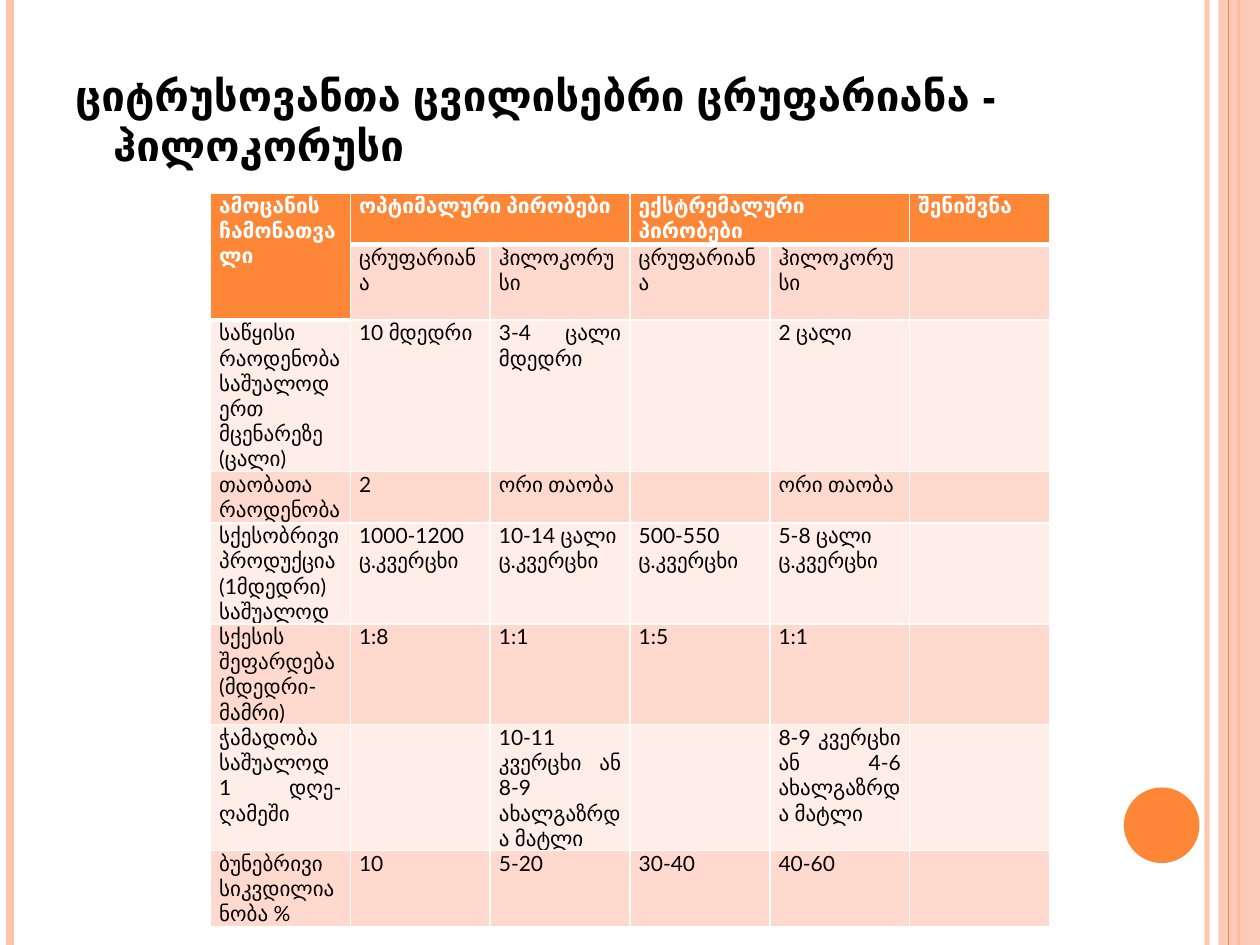
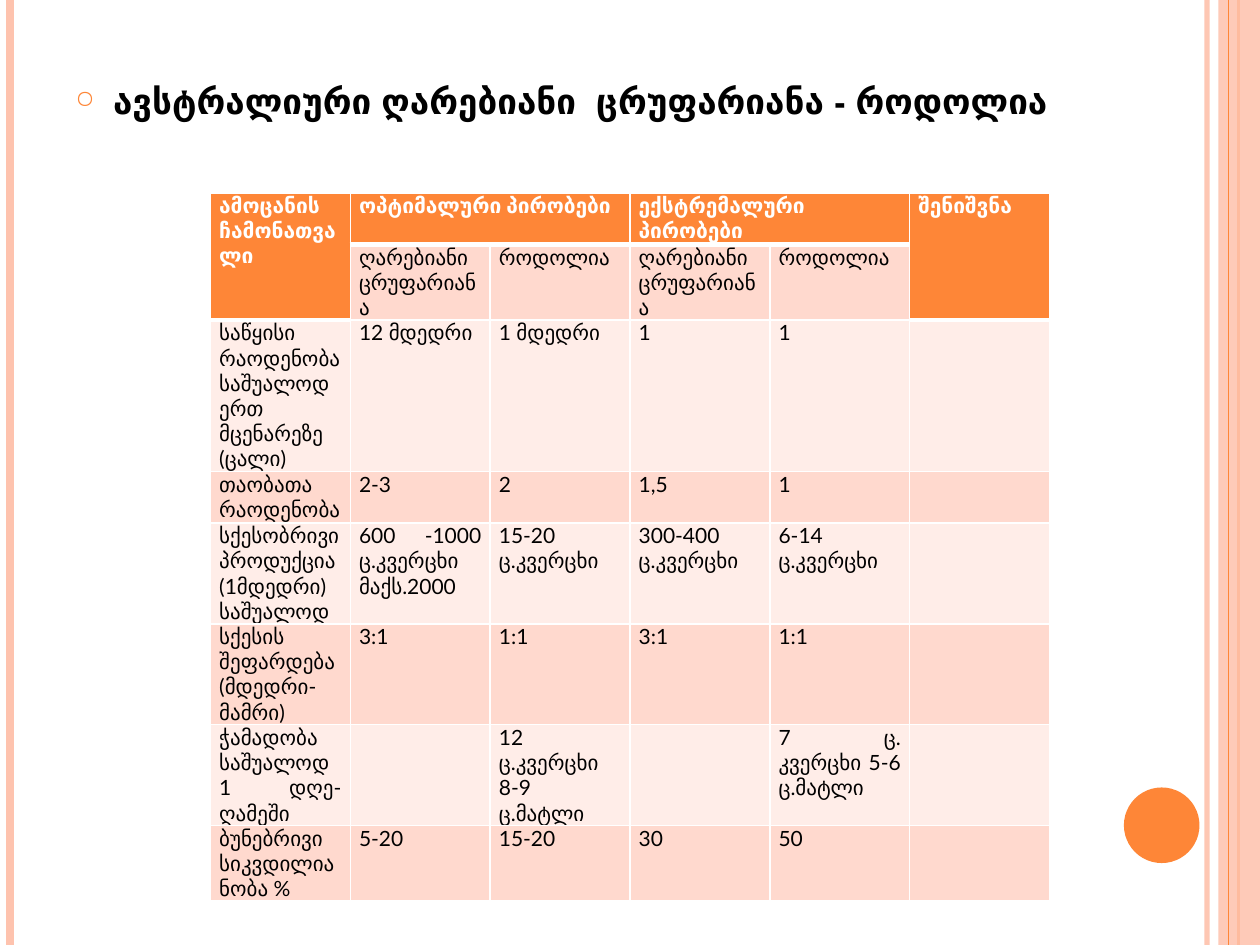
from dataclasses import dataclass

from lxml.etree import SubElement
from pptx import Presentation
from pptx.dml.color import RGBColor
from pptx.enum.shapes import MSO_CONNECTOR, MSO_SHAPE
from pptx.enum.text import PP_ALIGN
from pptx.oxml.ns import qn
from pptx.util import Inches, Pt


@dataclass(frozen=True)
class Theme:
    orange: str = "FE8637"
    peach: str = "FEC3AE"
    white: str = "FFFFFF"
    black: str = "000000"
    bands: tuple = ("FFEDE8", "FFD9CE")
    title_font: str = "TeX Gyre Schola"
    table_font: str = "Lato"
    table_size: int = 12
    rule_width: int = 1
    header_rule_width: int = 3


THEME = Theme()
WIDTH, HEIGHT = 10, 7.5
COLUMN_WIDTH, ROW_HEIGHT = 1.11, 0.41
HEADER_GROUPS = [None, "ოპტიმალური პირობები", None, "ექსტრემალური პირობები", None, "შენიშვნა"]
MEASURES = [
    "თაობათა რაოდენობა",
    "სქესობრივი პროდუქცია (1მდედრი) საშუალოდ",
    "სქესის შეფარდება (მდედრი-მამრი)",
    "ჭამადობა საშუალოდ 1 დღე-ღამეში",
    "ბუნებრივი სიკვდილიანობა %",
]

SCALE_INSECT = {
    "title": "ციტრუსოვანთა ცვილისებრი ცრუფარიანა - ჰილოკორუსი",
    "title_top": 0.5,
    "title_size": 24,
    "bullet": None,
    "corner": "ამოცანის\nჩამონათვალი",
    "header_depths": [2, 1, 1, 1, 1, 1],
    "frame_height": 5.62,
    "species": ["ცრუფარიანა", "ჰილოკორუსი"],
    "initial_count": "საწყისი რაოდენობა საშუალოდ ერთ მცენარეზე (ცალი)",
    "values": [
        ["10 მდედრი", "3-4 ცალი მდედრი", None, "2 ცალი"],
        ["2", "ორი თაობა", None, "ორი თაობა"],
        ["1000-1200 ც.კვერცხი", "10-14 ცალი\nც.კვერცხი", "500-550 ც.კვერცხი", "5-8 ცალი\nც.კვერცხი"],
        ["1:8", "1:1", "1:5", "1:1"],
        [None, "10-11 კვერცხი ან 8-9 ახალგაზრდა მატლი", None, "8-9 კვერცხი ან 4-6 ახალგაზრდა მატლი"],
        ["10", "5-20", "30-40", "40-60"],
    ],
}

FLUTED_SCALE = {
    "title": "ავსტრალიური ღარებიანი  ცრუფარიანა - როდოლია",
    "title_top": 0.58,
    "title_size": 20,
    "bullet": "○",
    "corner": "ამოცანის ჩამონათვალი",
    "header_depths": [2, 1, 1, 1, 1, 2],
    "frame_height": 5.61,
    "species": ["ღარებიანი  ცრუფარიანა", "როდოლია"],
    "initial_count": "საწყისი რაოდენობა\nსაშუალოდ ერთ მცენარეზე (ცალი)",
    "values": [
        ["12 მდედრი", "1 მდედრი", "1", "1"],
        ["2-3", "2", "1,5", "1"],
        ["600 -1000 ც.კვერცხი მაქს.2000", "15-20 ც.კვერცხი", "300-400 ც.კვერცხი", "6-14 ც.კვერცხი"],
        ["3:1", "1:1", "3:1", "1:1"],
        [None, "12 ც.კვერცხი 8-9 ც.მატლი", None, "7 ც. კვერცხი 5-6 ც.მატლი"],
        ["5-20", "15-20", "30", "50"],
    ],
}


def rgb(color):
    return RGBColor.from_string(color)


def set_opacity(element, percent):
    for color in element.iter(qn("a:srgbClr")):
        SubElement(color, qn("a:alpha"), val=str(percent * 1000))


def add_stripe(page, x, color, width, opacity=100):
    stripe = page.shapes.add_connector(
        MSO_CONNECTOR.STRAIGHT, Inches(x), Inches(0), Inches(x), Inches(HEIGHT)
    )
    stripe.line.color.rgb = rgb(color)
    stripe.line.width = Pt(width)
    properties = stripe.element.spPr
    if opacity < 100:
        set_opacity(properties, opacity)
    SubElement(properties, qn("a:effectLst"))


def add_block(page, kind, left, top, width, height, color, opacity=100):
    block = page.shapes.add_shape(kind, Inches(left), Inches(top), Inches(width), Inches(height))
    block.shadow.inherit = False
    block.fill.solid()
    block.fill.fore_color.rgb = rgb(color)
    block.line.fill.background()
    if opacity < 100:
        set_opacity(block.element.spPr, opacity)


def add_frame(page):
    add_stripe(page, 9.58, THEME.peach, 3, 93)
    add_stripe(page, 0.08, THEME.peach, 4.5)
    add_stripe(page, 9.83, THEME.orange, 1.5)
    add_block(page, MSO_SHAPE.RECTANGLE, 9.67, 0, 0.33, HEIGHT, THEME.peach, 87)
    add_stripe(page, 9.75, THEME.orange, 0.75)
    add_block(page, MSO_SHAPE.OVAL, 8.92, 6.25, 0.6, 0.6, THEME.orange)


def set_font(para, name, size, color, bold):
    para.font.name = name
    para.font.size = Pt(size)
    para.font.bold = bold
    para.font.color.rgb = rgb(color)


def add_bullet(properties, character):
    color = SubElement(properties, qn("a:buClr"))
    SubElement(color, qn("a:srgbClr"), val=THEME.orange)
    SubElement(properties, qn("a:buSzPct"), val="70000")
    SubElement(properties, qn("a:buChar"), char=character)


def add_title(page, content):
    box = page.shapes.add_textbox(
        Inches(0.5), Inches(content["title_top"]), Inches(8.17), Inches(6.5)
    )
    box.text_frame.word_wrap = True
    para = box.text_frame.paragraphs[0]
    para.text = content["title"]
    para.space_before = Pt(6)
    properties = para._p.get_or_add_pPr()
    properties.set("marL", str(Inches(0.3)))
    properties.set("indent", str(Inches(-0.3)))
    if content["bullet"]:
        add_bullet(properties, content["bullet"])
    set_font(para, THEME.title_font, content["title_size"], THEME.black, True)


def set_borders(cell, top, bottom):
    properties = cell._tc.get_or_add_tcPr()
    widths = {"L": THEME.rule_width, "R": THEME.rule_width, "T": top, "B": bottom}
    for side, width in widths.items():
        line = SubElement(properties, qn(f"a:ln{side}"), w=str(Pt(width)))
        fill = SubElement(line, qn("a:solidFill"))
        SubElement(fill, qn("a:srgbClr"), val=THEME.white)


def write_cell(cell, text, is_header):
    cell.margin_left = cell.margin_right = Inches(0.07)
    cell.margin_top = cell.margin_bottom = Inches(0)
    cell.text = text
    for para in cell.text_frame.paragraphs:
        para.alignment = PP_ALIGN.JUSTIFY
        color = THEME.white if is_header else THEME.black
        set_font(para, THEME.table_font, THEME.table_size, color, is_header)


def style_cell(cell, row, header_depth):
    is_header = row < header_depth
    top = THEME.header_rule_width if row == header_depth else THEME.rule_width
    bottom = THEME.header_rule_width if is_header else THEME.rule_width
    set_borders(cell, top, bottom)
    cell.fill.solid()
    cell.fill.fore_color.rgb = rgb(THEME.orange if is_header else THEME.bands[row % 2])


def table_rows(content):
    measures = [content["initial_count"], *MEASURES]
    body = [[measure, *values, None] for measure, values in zip(measures, content["values"])]
    return [
        [content["corner"], *HEADER_GROUPS[1:]],
        [None, *content["species"] * 2, None],
        *body,
    ]


def add_comparison(page, content):
    rows = table_rows(content)
    depths = content["header_depths"]
    frame = page.shapes.add_table(
        len(rows), len(depths), Inches(1.67), Inches(1.53),
        Inches(COLUMN_WIDTH * len(depths)), Inches(ROW_HEIGHT * len(rows)),
    )
    table = frame.table
    for column in table.columns:
        column.width = Inches(COLUMN_WIDTH)
    for table_row in table.rows:
        table_row.height = Inches(ROW_HEIGHT)
    frame.height = Inches(content["frame_height"])
    for row, texts in enumerate(rows):
        for column, text in enumerate(texts):
            cell = table.cell(row, column)
            style_cell(cell, row, depths[column])
            if text:
                write_cell(cell, text, row < depths[column])
    for column in (1, 3):
        table.cell(0, column).merge(table.cell(0, column + 1))
    for column, depth in enumerate(depths):
        if depth > 1:
            table.cell(0, column).merge(table.cell(depth - 1, column))


def main():
    deck = Presentation()
    deck.slide_width, deck.slide_height = Inches(WIDTH), Inches(HEIGHT)
    for content in (SCALE_INSECT, FLUTED_SCALE):
        page = deck.slides.add_slide(deck.slide_layouts[6])
        add_frame(page)
        add_title(page, content)
        add_comparison(page, content)
    deck.save("out.pptx")


if __name__ == "__main__":
    main()
